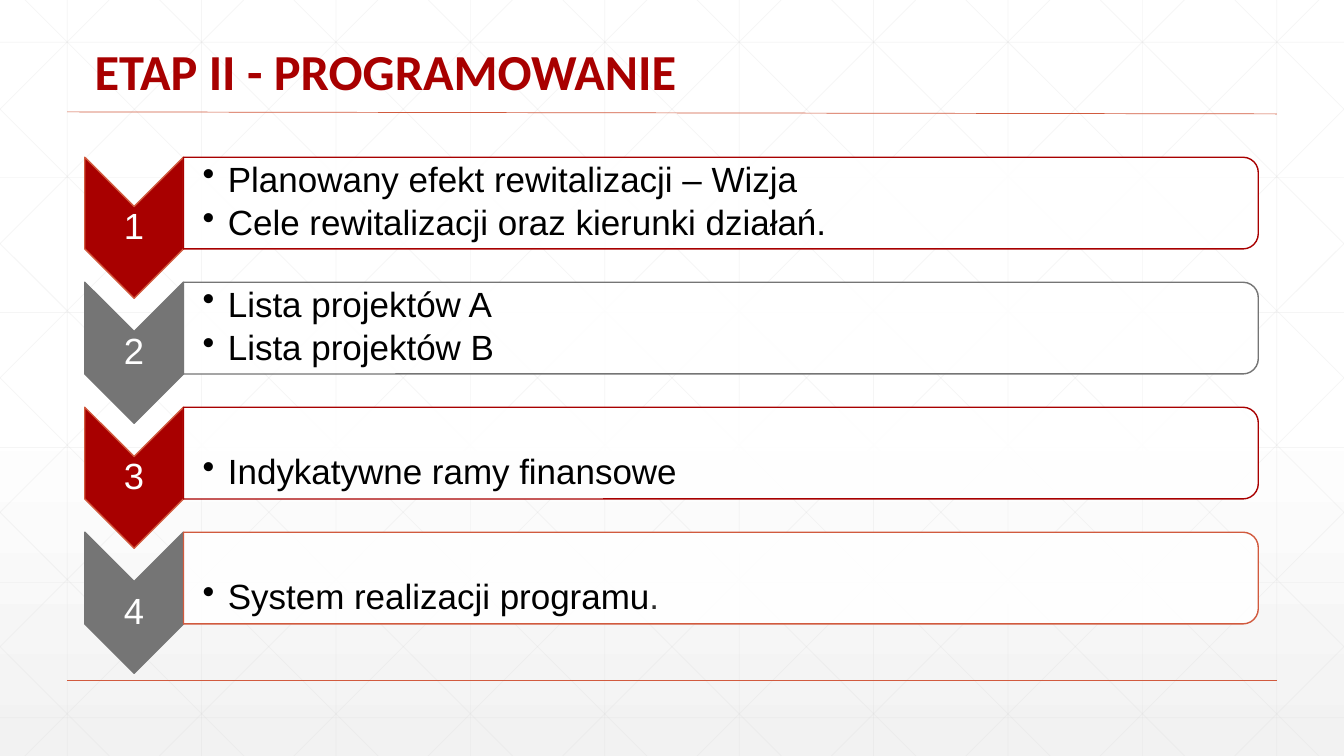
import pptx
import pptx.dml.color
import pptx.enum.shapes
import pptx.enum.text
import pptx.oxml.ns
import pptx.util
from lxml import etree

WIDTH, HEIGHT = 13.33, 7.5
RED, GRAY, ORANGE, WHITE, BLACK, MESH = (
    "A80000", "757575", "D15A3E", "FFFFFF", "000000", "D9D9D9")
MARGIN = WIDTH / 20
MESH_STEP = WIDTH / 10

# Grid of the four steps
STEP_TOP, STEP_PITCH = 1.56, 1.24
ARROW_LEFT, ARROW_WIDTH, ARROW_HEIGHT = 0.84, 0.98, 1.4
PANEL_LEFT = ARROW_LEFT + ARROW_WIDTH
PANEL_WIDTH, PANEL_HEIGHT = 10.66, 0.91

# Number, arrow fill, arrow line, panel line, points, tail, number shift down
STEPS = [
    ("1", RED, ORANGE, RED,
     ["Planowany efekt rewitalizacji – Wizja",
      "Cele rewitalizacji oraz kierunki działań."], "", 0),
    ("2", GRAY, GRAY, GRAY, ["Lista projektów A", "Lista projektów B"], "", 0),
    ("3", RED, ORANGE, RED, ["Indykatywne ramy finansowe"], "", 0),
    ("4", GRAY, GRAY, ORANGE, ["System realizacji programu"], ".", 0.1),
]

Inches, Pt = pptx.util.Inches, pptx.util.Pt
Preset = pptx.enum.shapes.MSO_SHAPE
Anchor = pptx.enum.text.MSO_ANCHOR
Align = pptx.enum.text.PP_ALIGN


def color(hex_string):
    return pptx.dml.color.RGBColor.from_string(hex_string)


def set_opacity(element, percent):
    """Add an alpha value to the colour found in a fill or line element."""
    tint = element.find(".//" + pptx.oxml.ns.qn("a:srgbClr"))
    etree.SubElement(tint, pptx.oxml.ns.qn("a:alpha"), val=str(percent * 1000))


def add_line(slide, start, end, hex_string, weight, opacity=100):
    line = slide.shapes.add_connector(
        pptx.enum.shapes.MSO_CONNECTOR.STRAIGHT,
        *(Inches(v) for v in (*start, *end)))
    line.line.color.rgb = color(hex_string)
    line.line.width = Pt(weight)
    properties = line._element.spPr
    if opacity < 100:
        set_opacity(properties, opacity)
    etree.SubElement(properties, pptx.oxml.ns.qn("a:effectLst"))


def add_turned_shape(slide, preset, left, top, width, height, fill, line, opacity=100):
    """Add a shape turned by 90 degrees; the box is the one seen after turning."""
    shape = slide.shapes.add_shape(
        preset, Inches(left + (width - height) / 2), Inches(top + (height - width) / 2),
        Inches(height), Inches(width))
    shape.rotation = 90
    shape.shadow.inherit = False
    shape.fill.solid()
    shape.fill.fore_color.rgb = color(fill)
    if opacity < 100:
        set_opacity(shape._element.spPr, opacity)
    shape.line.color.rgb = color(line)
    shape.line.width = Pt(1)


def add_text(slide, paragraphs, left, top, width, height, size=25, font="Arial",
             hex_string=BLACK, bold=False, align=Align.LEFT, anchor=Anchor.MIDDLE,
             insets=(0.02, 0.02), bullet=False, tail=""):
    box = slide.shapes.add_textbox(*(Inches(v) for v in (left, top, width, height)))
    frame = box.text_frame
    frame.word_wrap = True
    frame.vertical_anchor = anchor
    frame.margin_left, frame.margin_top = (Inches(v) for v in insets)
    frame.margin_right = Inches(0.02)
    frame.margin_bottom = frame.margin_top
    last = len(paragraphs) - 1
    for index, words in enumerate(paragraphs):
        paragraph = frame.add_paragraph() if index else frame.paragraphs[0]
        paragraph.alignment = align
        paragraph.line_spacing = 0.9
        paragraph.space_after = Pt(0 if index == last else 4.3)
        if bullet:
            properties = paragraph._p.get_or_add_pPr()
            properties.set("marL", str(Inches(0.25)))
            properties.set("indent", str(-Inches(0.25)))
            etree.SubElement(properties, pptx.oxml.ns.qn("a:buChar"), char="•")
        parts = [(words, hex_string)]
        if tail and index == last:
            parts.append((tail, "2D2E2D"))
        for part, part_color in parts:
            run = paragraph.add_run()
            run.text = part
            run.font.name, run.font.size, run.font.bold = font, Pt(size), bold
            run.font.color.rgb = color(part_color)


def add_background(slide):
    fill = slide.background.fill
    fill.gradient()
    fill.gradient_angle = 270
    for stop, position, shade in zip(fill.gradient_stops, (0.53, 1), (WHITE, "F2F2F2")):
        stop.position = position
        stop.color.rgb = color(shade)


def add_mesh(slide):
    def mesh_line(start, end):
        add_line(slide, start, end, MESH, 0.5, opacity=25)

    for column in range(10):
        x = MARGIN + column * MESH_STEP
        mesh_line((x, 0), (x, HEIGHT))
    for row in range(6):
        y = 0.42 + row * 1.34
        mesh_line((0, y), (WIDTH, y))
    # Diagonals are cut at the slide's edges and mirrored left to right
    for index in range(-5, 10):
        top_x = 0.25 + index * MESH_STEP
        start_x, end_x = max(top_x, 0), min(top_x + HEIGHT, WIDTH)
        start_y, end_y = start_x - top_x, end_x - top_x
        mesh_line((start_x, start_y), (end_x, end_y))
        mesh_line((WIDTH - start_x, start_y), (WIDTH - end_x, end_y))


def add_step(slide, row, number, fill, arrow_line, panel_line, points, tail, shift):
    top = STEP_TOP + row * STEP_PITCH
    add_turned_shape(slide, Preset.CHEVRON, ARROW_LEFT, top, ARROW_WIDTH,
                     ARROW_HEIGHT, fill, arrow_line)
    add_text(slide, [number], ARROW_LEFT, top + ARROW_WIDTH / 2 + shift, ARROW_WIDTH,
             ARROW_HEIGHT - ARROW_WIDTH, size=26, hex_string=WHITE, align=Align.CENTER)
    add_turned_shape(slide, Preset.ROUND_2_SAME_RECTANGLE, PANEL_LEFT, top, PANEL_WIDTH,
                     PANEL_HEIGHT, WHITE, panel_line, opacity=90)
    # A single point sits on the panel's lower line
    anchor = Anchor.MIDDLE if len(points) > 1 else Anchor.BOTTOM
    add_text(slide, points, PANEL_LEFT, top + 0.04, PANEL_WIDTH - 0.05,
             PANEL_HEIGHT - 0.09, anchor=anchor, insets=(0.19, 0.02),
             bullet=True, tail=tail)


def main():
    deck = pptx.Presentation()
    deck.slide_width, deck.slide_height = Inches(WIDTH), Inches(HEIGHT)
    slide = deck.slides.add_slide(deck.slide_layouts[6])

    # Backdrop and rules
    add_background(slide)
    add_mesh(slide)
    add_line(slide, (MARGIN, 6.75), (WIDTH - MARGIN, 6.75), ORANGE, 1)
    add_line(slide, (MARGIN, 1.11), (WIDTH - MARGIN, 1.13), ORANGE, 0.5)

    # Title
    add_text(slide, ["ETAP II - PROGRAMOWANIE"], 0.84, 0.3, 10.5, 0.76, size=36,
             font="Calibri", hex_string=RED, bold=True, anchor=Anchor.BOTTOM,
             insets=(0.1, 0.05))

    # Steps
    for row, step in enumerate(STEPS):
        add_step(slide, row, *step)

    deck.save("out.pptx")


if __name__ == "__main__":
    main()
